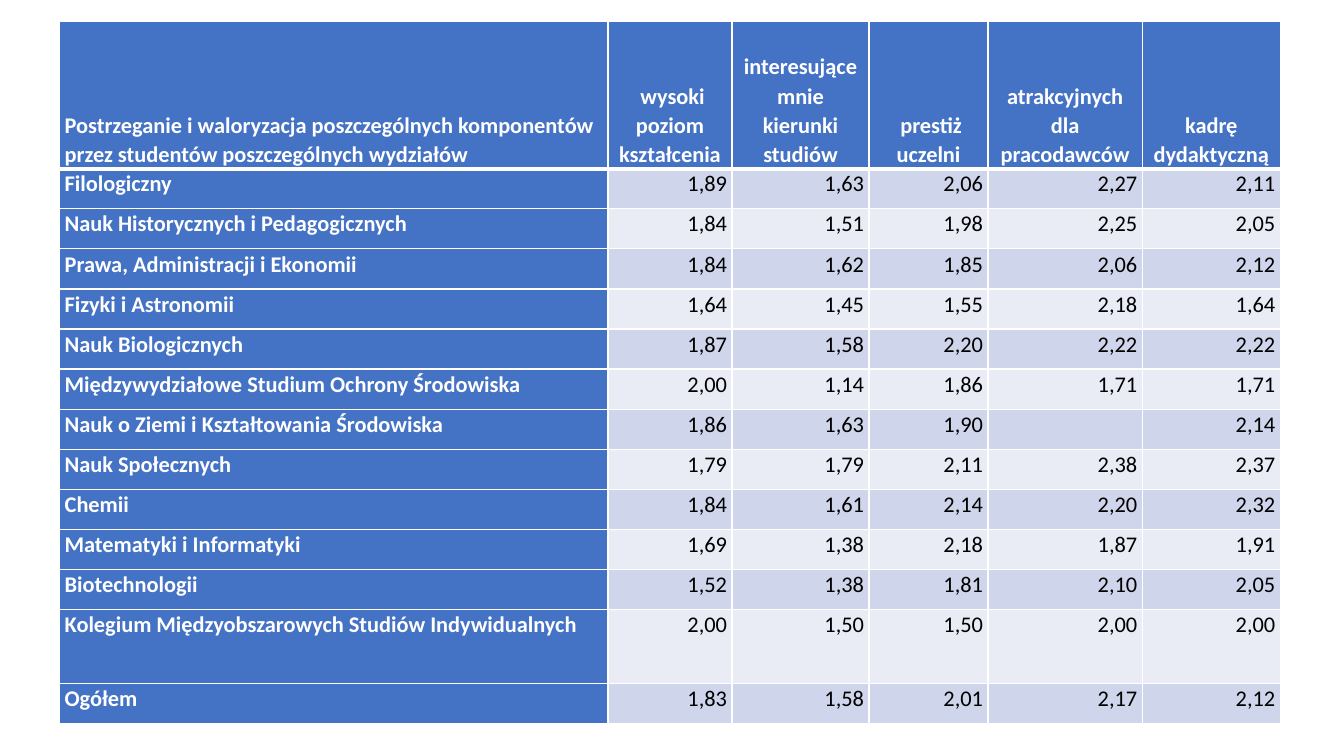
import pptx
import pptx.util
import pptx.dml.color
import pptx.enum.text
from lxml import etree
from pptx.oxml.ns import qn

Pt = pptx.util.Pt
RGB = pptx.dml.color.RGBColor.from_string
ALIGN = pptx.enum.text.PP_ALIGN
ANCHOR = pptx.enum.text.MSO_ANCHOR

COLORS = {"head": "4472C4", "odd": "CFD5EA", "even": "E9EBF5",
          "light": "FFFFFF", "dark": "000000"}
COL_WIDTHS = [391.7, 88.6, 97.9, 85, 110.2, 98.6]
HEAD_HEIGHT, ROW_HEIGHT, TALL_HEIGHT = 105.1, 28.65, 52.8
TALL_ROW = 12

HEADERS = [
    "Postrzeganie i waloryzacja poszczególnych komponentów "
    "przez studentów poszczególnych wydziałów",
    " wysoki poziom kształcenia", "interesujące mnie kierunki studiów",
    " prestiż uczelni", "atrakcyjnych dla pracodawców", "kadrę dydaktyczną"]
FACULTIES = [
    ["Filologiczny", "1,89", "1,63", "2,06", "2,27", "2,11"],
    ["Nauk Historycznych i Pedagogicznych", "1,84", "1,51", "1,98", "2,25", "2,05"],
    ["Prawa, Administracji i Ekonomii", "1,84", "1,62", "1,85", "2,06", "2,12"],
    ["Fizyki i Astronomii", "1,64", "1,45", "1,55", "2,18", "1,64"],
    ["Nauk Biologicznych", "1,87", "1,58", "2,20", "2,22", "2,22"],
    ["Międzywydziałowe Studium Ochrony Środowiska", "2,00", "1,14", "1,86", "1,71", "1,71"],
    ["Nauk o Ziemi i Kształtowania Środowiska", "1,86", "1,63", "1,90", "", "2,14"],
    ["Nauk Społecznych", "1,79", "1,79", "2,11", "2,38", "2,37"],
    ["Chemii", "1,84", "1,61", "2,14", "2,20", "2,32"],
    ["Matematyki i Informatyki", "1,69", "1,38", "2,18", "1,87", "1,91"],
    ["Biotechnologii", "1,52", "1,38", "1,81", "2,10", "2,05"],
    ["Kolegium Międzyobszarowych Studiów Indywidualnych", "2,00", "1,50", "1,50", "2,00", "2,00"],
    ["Ogółem", "1,83", "1,58", "2,01", "2,17", "2,12"],
]


def set_attrs(obj, values):
    for name, value in values.items():
        setattr(obj, name, value)


def add_borders(cell, widths):
    tcPr = cell._tc.get_or_add_tcPr()
    for side, width in widths.items():
        ln = etree.SubElement(tcPr, qn("a:ln" + side), w=str(Pt(width)))
        fill = etree.SubElement(ln, qn("a:solidFill"))
        etree.SubElement(fill, qn("a:srgbClr"), val=COLORS["light"])


def fill_cell(cell, text, row, col):
    is_head, is_label = row == 0, col == 0
    bold = is_head or is_label
    # Borders, with a heavier rule under the header
    add_borders(cell, {"L": 1, "R": 1, "T": 3 if row == 1 else 1,
                       "B": 3 if is_head else 1})
    # Fill: blue header and labels, banded values
    cell.fill.solid()
    band = "head" if bold else "odd" if row % 2 else "even"
    cell.fill.fore_color.rgb = RGB(COLORS[band])
    set_attrs(cell, {"margin_left": Pt(3.6), "margin_right": Pt(3.6),
                     "margin_top": 0, "margin_bottom": 0,
                     "vertical_anchor": ANCHOR.BOTTOM if is_head else ANCHOR.TOP})
    if not text:
        return
    # Text
    p = cell.text_frame.paragraphs[0]
    align = ALIGN.LEFT if is_label else ALIGN.CENTER if is_head else ALIGN.RIGHT
    set_attrs(p, {"alignment": align, "line_spacing": 1.07,
                  "space_after": Pt(10 if is_head and is_label else 8)})
    r = p.add_run()
    r.text = text
    set_attrs(r.font, {"name": "Calibri", "size": Pt(16), "bold": bold})
    r.font.color.rgb = RGB(COLORS["light" if bold else "dark"])


def add_ratings_table(s, left, top):
    rows = [HEADERS] + FACULTIES
    heights = [HEAD_HEIGHT] + [ROW_HEIGHT] * len(FACULTIES)
    heights[TALL_ROW] = TALL_HEIGHT
    table = s.shapes.add_table(len(rows), len(COL_WIDTHS), Pt(left), Pt(top),
                               Pt(sum(COL_WIDTHS)), Pt(sum(heights))).table
    for column, width in zip(table.columns, COL_WIDTHS):
        column.width = Pt(width)
    for row, (texts, height) in enumerate(zip(rows, heights)):
        table.rows[row].height = Pt(height)
        for col, text in enumerate(texts):
            fill_cell(table.cell(row, col), text, row, col)


def main():
    prs = pptx.Presentation()
    set_attrs(prs, {"slide_width": Pt(960), "slide_height": Pt(540)})
    s = prs.slides.add_slide(prs.slide_layouts[6])
    add_ratings_table(s, 42.6, 15.4)
    prs.save("out.pptx")


if __name__ == "__main__":
    main()
